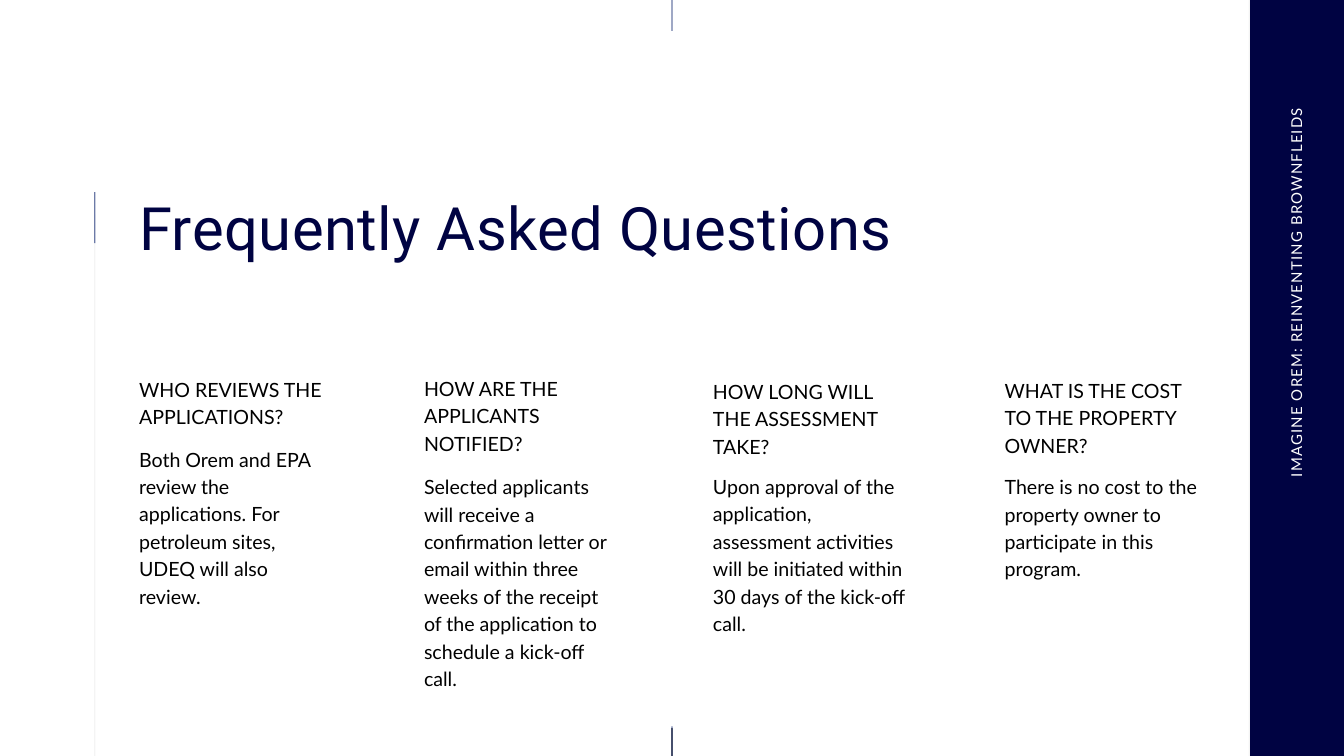
from pptx import Presentation
from pptx.dml.color import RGBColor
from pptx.enum.shapes import MSO_SHAPE
from pptx.enum.text import PP_ALIGN
from pptx.util import Inches, Pt

NAVY = RGBColor(0x00, 0x03, 0x42)
BLUE = RGBColor(0x6C, 0x7A, 0xA7)
PALE = RGBColor(0xF4, 0xF4, 0xF4)
WHITE = RGBColor(0xFF, 0xFF, 0xFF)
BLACK = RGBColor(0x00, 0x00, 0x00)

COLS, ROWS = 20, 11.25
THIN = 0.02

TITLE = dict(font=dict(name="Roboto", size=Pt(64)), color=NAVY, lead=80.6, track=60)
BODY = dict(font=dict(name="Lato", size=Pt(21)), color=BLACK, lead=29.4)
SIDE = dict(font=dict(name="Lato", size=Pt(16)), color=WHITE, lead=22.4, track=128,
            align=PP_ALIGN.RIGHT)

FAQ = [
    (2.07, 2.86, 5.56, 0.8, 6.6, 2.02, "WHO REVIEWS THE APPLICATIONS?",
     "Both Orem and EPA review the applications. For petroleum sites, "
     "UDEQ will also review."),
    (6.31, 2.91, 5.55, 1.21, 7.01, 2.85, "HOW ARE THE APPLICANTS NOTIFIED?",
     "Selected applicants will receive a confirmation letter or email within three "
     "weeks of the receipt of the application to schedule a kick-off call."),
    (10.61, 2.91, 5.59, 1.21, 7.01, 2.44, "HOW LONG WILL THE ASSESSMENT TAKE?",
     "Upon approval of the application, assessment activities will be initiated "
     "within 30 days of the kick-off call."),
    (14.95, 2.88, 5.58, 1.21, 7.01, 1.62, "WHAT IS THE COST TO THE PROPERTY OWNER?",
     "There is no cost to the property owner to participate in this program."),
]


class Deck:
    """Draws styled elements on a slide laid out as 20 columns by 11.25 rows."""

    def __init__(self):
        self.prs = Presentation()
        self.prs.slide_width = Inches(COLS)
        self.prs.slide_height = Inches(ROWS)
        self.cell = self.prs.slide_width / COLS
        self.slide = self.prs.slides.add_slide(self.prs.slide_layouts[6])

    def place(self, *grid):
        return [round(n * self.cell) for n in grid]

    def bar(self, col, row, wide, high, fill, edge=None):
        box = self.slide.shapes.add_shape(
            MSO_SHAPE.RECTANGLE, *self.place(col, row, wide, high))
        box.shadow.inherit = False
        box.fill.solid()
        box.fill.fore_color.rgb = fill
        if edge is None:
            box.line.fill.background()
        else:
            box.line.color.rgb = edge
            box.line.width = Pt(0.75)

    def text(self, col, row, wide, high, words, style, turn=0):
        box = self.slide.shapes.add_textbox(*self.place(col, row, wide, high))
        box.rotation = turn
        frame = box.text_frame
        inset = dict.fromkeys(
            ("margin_left", "margin_top", "margin_right", "margin_bottom"), 0)
        for key, value in dict(inset, word_wrap=True).items():
            setattr(frame, key, value)
        para = frame.paragraphs[0]
        para.alignment = style.get("align", PP_ALIGN.LEFT)
        para.line_spacing = Pt(style["lead"])
        run = para.add_run()
        run.text = words
        for key, value in style["font"].items():
            setattr(run.font, key, value)
        run.font.color.rgb = style["color"]
        if "track" in style:
            run._r.get_or_add_rPr().set("spc", str(style["track"]))

    def save(self):
        self.prs.save("out.pptx")


def main():
    deck = Deck()
    mid = (COLS - THIN) / 2
    deck.text(2.07, 2.78, 15, 1.1, "Frequently Asked Questions", TITLE)
    deck.bar(1.4, 3.19, THIN, 8.48, PALE)
    deck.bar(18.59, -0.07, 1.53, 11.41, NAVY)
    deck.bar(18.58, -0.31, THIN, 12.39, PALE)
    deck.bar(1.4, 2.86, THIN, 0.76, BLUE)
    deck.bar(mid, 10.84, THIN, 1.44, WHITE, BLACK)
    for col, wide, top, high, low, deep, ask, reply in FAQ:
        deck.text(col, top, wide, high, ask, BODY)
        deck.text(col, low, wide, deep, reply, BODY)
    for row in (-0.89, 10.81):
        deck.bar(mid, row, THIN, 1.35, BLUE)
    deck.text(16.18, 4.54, 6.16, 0.3, "IMAGINE OREM: REINVENTING BROWNFLEIDS",
              SIDE, turn=270)
    deck.save()


if __name__ == "__main__":
    main()
